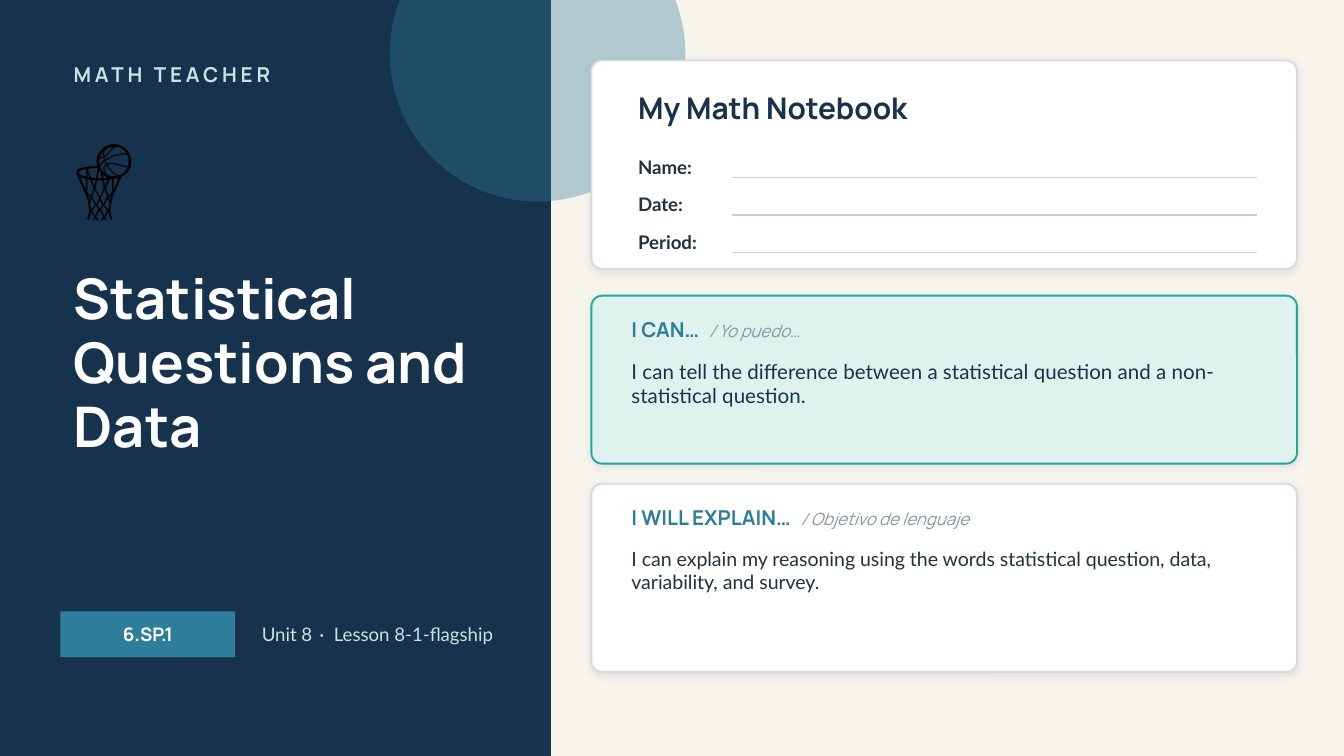
from dataclasses import dataclass

from lxml import etree
from pptx import Presentation
from pptx.dml.color import RGBColor
from pptx.enum.shapes import MSO_CONNECTOR, MSO_SHAPE
from pptx.enum.text import MSO_ANCHOR, PP_ALIGN
from pptx.oxml.ns import qn
from pptx.util import Inches, Pt

RECTANGLE, OVAL, ROUNDED = MSO_SHAPE.RECTANGLE, MSO_SHAPE.OVAL, MSO_SHAPE.ROUNDED_RECTANGLE
STRAIGHT = MSO_CONNECTOR.STRAIGHT
TOP, MIDDLE = MSO_ANCHOR.TOP, MSO_ANCHOR.MIDDLE
LEFT, CENTER = PP_ALIGN.LEFT, PP_ALIGN.CENTER
COLUMNS, ROWS = 100, 56.25


@dataclass(frozen=True)
class Theme:
    """Colours, fonts and type sizes of the notebook cover."""
    cream: str = "F7F4EC"
    navy: str = "17324D"
    blue: str = "2E7D9A"
    teal: str = "1FA6A2"
    mint: str = "DFF2EE"
    pale_teal: str = "BFE6E2"
    white: str = "FFFFFF"
    black: str = "000000"
    ink: str = "24323F"
    grey: str = "8A96A3"
    border: str = "D6DBDF"
    rule: str = "C7CDD2"
    shadow: str = "1C2E42"
    heading_font: str = "Manrope"
    body_font: str = "Lato"
    icon_font: str = "Calibri"
    icon: float = 44
    title: float = 30
    subtitle: float = 16
    heading: float = 11
    detail: float = 10.5
    label: float = 10
    note: float = 9


@dataclass(frozen=True)
class Span:
    """A stretch of text in one style, with tracking in points."""
    text: str
    size: float
    color: str
    font: str
    bold: bool = False
    italic: bool = False
    tracking: float = 0


class CoverBuilder:
    """Draws styled elements on the current slide, placed in grid units."""

    def __init__(self, presentation, theme):
        """Add a blank slide with the theme background."""
        self.theme = theme
        self.column = presentation.slide_width / COLUMNS
        self.row = presentation.slide_height / ROWS
        self.slide = presentation.slides.add_slide(presentation.slide_layouts[6])
        self.paint(self.slide.background.fill, theme.cream)

    def place(self, left, top, width, height):
        """Turn columns and rows into slide lengths."""
        return (round(left * self.column), round(top * self.row),
                round(width * self.column), round(height * self.row))

    def paint(self, fill, color):
        """Set a solid fill."""
        fill.solid()
        fill.fore_color.rgb = RGBColor.from_string(color)

    def shape(self, kind, box, color, opacity=None):
        """Add a flat, borderless shape."""
        shape = self.slide.shapes.add_shape(kind, *self.place(*box))
        self.paint(shape.fill, color)
        if opacity is not None:
            color_element = next(shape._element.spPr.iter(qn("a:srgbClr")))
            etree.SubElement(color_element, qn("a:alpha"), val=str(opacity * 1000))
        shape.line.fill.background()
        shape.shadow.inherit = False
        return shape

    def card(self, box, color, border):
        """Add a bordered card with rounded corners and a soft shadow."""
        card = self.shape(ROUNDED, box, color)
        card.adjustments[0] = 0.8 / box[3]
        self.paint(card.line.fill, border)
        card.line.width = Pt(1)
        effects = card._element.spPr.find(qn("a:effectLst"))
        shadow = etree.SubElement(effects, qn("a:outerShdw"), blurRad=str(Pt(4)),
                                  dist=str(Pt(1)), dir="5400000", rotWithShape="0")
        shade = etree.SubElement(shadow, qn("a:srgbClr"), val=self.theme.shadow)
        etree.SubElement(shade, qn("a:alpha"), val="10000")

    def fill_text(self, shape, spans, anchor=MIDDLE, align=LEFT, line_spacing=None):
        """Fill a shape with one paragraph of styled spans."""
        frame = shape.text_frame
        frame.word_wrap = True
        frame.vertical_anchor = anchor
        paragraph = frame.paragraphs[0]
        paragraph.alignment = align
        paragraph.line_spacing = line_spacing
        for span in spans:
            run = paragraph.add_run()
            run.text = span.text
            run.font.size = Pt(span.size)
            run.font.name = span.font
            run.font.bold = span.bold
            run.font.italic = span.italic
            run.font.color.rgb = RGBColor.from_string(span.color)
            if span.tracking:
                run.font._element.set("spc", str(round(span.tracking * 100)))

    def text(self, box, *spans, **layout):
        """Add a text box."""
        self.fill_text(self.slide.shapes.add_textbox(*self.place(*box)), spans, **layout)

    def rule(self, left, top, width):
        """Add a thin horizontal writing line."""
        x, y, length, _ = self.place(left, top, width, 0)
        line = self.slide.shapes.add_connector(STRAIGHT, x, y, x + length, y)
        self.paint(line.line.fill, self.theme.rule)
        line.line.width = Pt(0.75)
        etree.SubElement(line._element.spPr, qn("a:effectLst"))

    def field(self, top, name):
        """Add a label with its writing line."""
        theme = self.theme
        self.text((46.5, top, 8, 2.4), Span(name, theme.label, theme.ink, theme.body_font, True))
        self.rule(54.5, top + 2, 39)

    def objective(self, top, height, fill, border, heading, note, body):
        """Add a card with a bilingual heading and a sentence."""
        theme = self.theme
        self.card((44, top, 52.5, height), fill, border)
        self.text((46, top + 1, 48.5, 3),
                  Span(heading, theme.heading, theme.blue, theme.heading_font, True),
                  Span(" ", theme.heading, theme.blue, theme.heading_font, True, tracking=3),
                  Span(note, theme.note, theme.grey, theme.heading_font, italic=True))
        self.text((46, top + 4.2, 48.5, height - 4.7), body, anchor=TOP)


def main():
    """Build the notebook cover slide."""
    theme = Theme()
    presentation = Presentation()
    presentation.slide_width = Inches(10)
    presentation.slide_height = Inches(5.625)
    cover = CoverBuilder(presentation, theme)

    cover.shape(RECTANGLE, (0, 0, 41, ROWS), theme.navy)
    cover.shape(OVAL, (29, -7, 22, 22), theme.blue, opacity=35)
    cover.text((4.5, 4, 33, 3), Span("MATH TEACHER", theme.heading, theme.pale_teal,
                                     theme.heading_font, True, tracking=2))
    cover.text((4.5, 8.5, 15, 9), Span("🏀", theme.icon, theme.black, theme.icon_font))
    cover.text((4.5, 19.5, 33, 17),
               Span("Statistical Questions and Data", theme.title, theme.white,
                    theme.heading_font, True), anchor=TOP, line_spacing=0.95)
    badge = cover.shape(RECTANGLE, (4.5, 45.5, 13, 3.4), theme.blue)
    cover.fill_text(badge, [Span("6.SP.1", theme.label, theme.white, theme.heading_font, True)],
                    align=CENTER)
    lesson = [("Unit 8", 0), (" · ", 1.3), ("Lesson 8-1-flagship", 0)]
    cover.text((18.5, 45.5, 21, 3.4),
               *[Span(words, theme.label, theme.pale_teal, theme.body_font, tracking=tracking)
                 for words, tracking in lesson])

    cover.card((44, 4.5, 52.5, 15.5), theme.white, theme.border)
    cover.text((46.5, 6, 48, 4), Span("My Math Notebook", theme.subtitle, theme.navy,
                                      theme.heading_font, True))
    for index, name in enumerate(["Name:", "Date:", "Period:"]):
        cover.field(11.2 + 2.8 * index, name)

    cover.objective(22, 12.5, theme.mint, theme.teal, "I CAN…", "/ Yo puedo…",
                    Span("I can tell the difference between a statistical question and a "
                         "non-statistical question.", theme.heading, theme.navy, theme.body_font))
    cover.objective(36, 14, theme.white, theme.border, "I WILL EXPLAIN…",
                    "/ Objetivo de lenguaje",
                    Span("I can explain my reasoning using the words statistical question, data, "
                         "variability, and survey.", theme.detail, theme.ink, theme.body_font))
    presentation.save("out.pptx")


if __name__ == "__main__":
    main()
